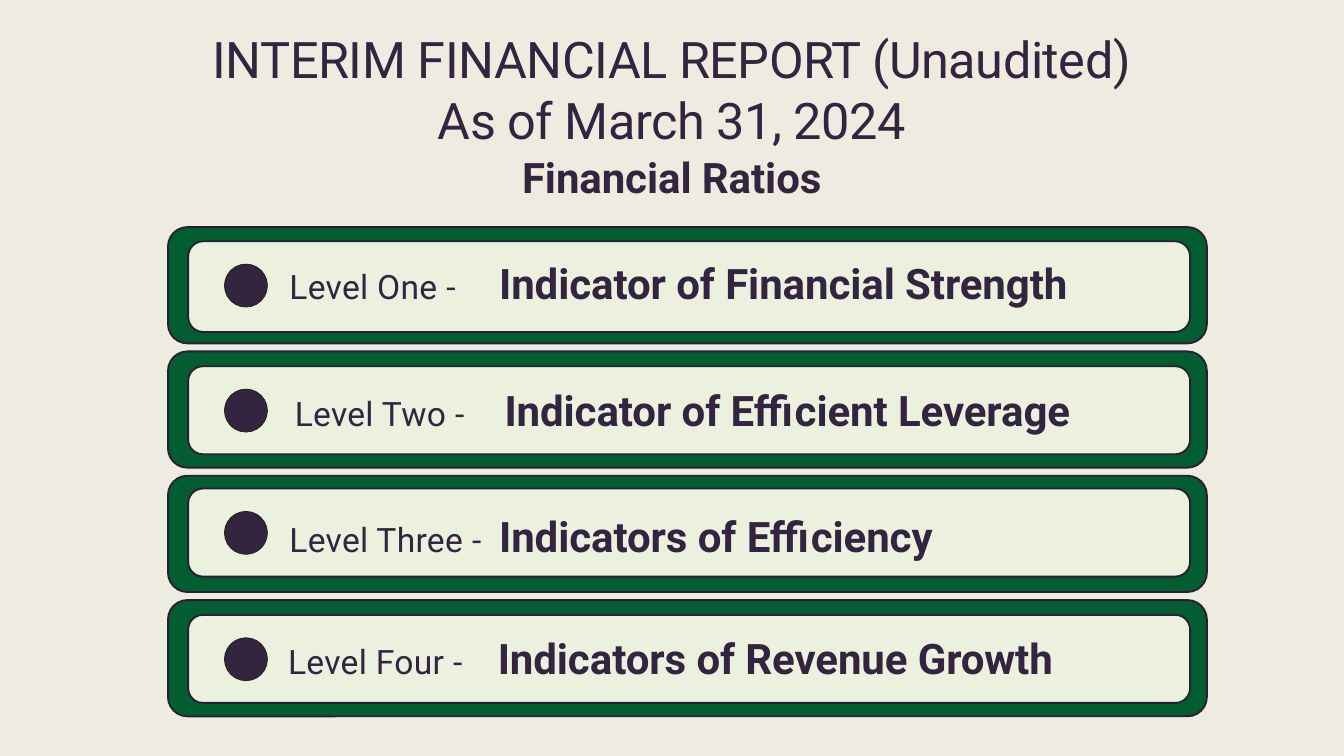
"""Build the financial ratios overview slide."""
from dataclasses import dataclass

import lxml.etree
import pptx
import pptx.dml.color
import pptx.enum.shapes
import pptx.enum.text
import pptx.oxml.ns
import pptx.util

Inches = pptx.util.Inches
Pt = pptx.util.Pt
Shape = pptx.enum.shapes.MSO_SHAPE


@dataclass(frozen=True)
class Theme:
    font: str = "Roboto"
    background: str = "EEECE1"
    frame: str = "025E32"
    panel: str = "EBF1DE"
    outline: str = "291F35"
    ink: str = "332440"
    dot_outline: str = "1E1C11"
    title_size: float = 54
    heading_size: float = 45
    label_size: float = 36
    outline_width: float = 2
    dot_outline_width: float = 0.75


def rgb(value):
    return pptx.dml.color.RGBColor.from_string(value)


class RatioSlide:
    def __init__(self, slide, theme):
        self.slide = slide
        self.theme = theme
        slide.background.fill.solid()
        slide.background.fill.fore_color.rgb = rgb(theme.background)

    def shape(self, preset, box, fill, outline, width):
        item = self.slide.shapes.add_shape(preset, *map(Inches, box))
        item.shadow.inherit = False
        item.fill.solid()
        item.fill.fore_color.rgb = rgb(fill)
        item.line.color.rgb = rgb(outline)
        item.line.width = Pt(width)

    def panel(self, box, fill):
        self.shape(Shape.ROUNDED_RECTANGLE, box, fill,
                   self.theme.outline, self.theme.outline_width)

    def dot(self, left, top, size):
        self.shape(Shape.OVAL, (left, top, size, size), self.theme.ink,
                   self.theme.dot_outline, self.theme.dot_outline_width)

    def text_frame(self, box):
        frame = self.slide.shapes.add_textbox(*map(Inches, box)).text_frame
        frame.word_wrap = True
        frame.auto_size = pptx.enum.text.MSO_AUTO_SIZE.SHAPE_TO_FIT_TEXT
        return frame

    def style(self, paragraph, size=None, bold=None):
        paragraph.font.name = self.theme.font
        paragraph.font.color.rgb = rgb(self.theme.ink)
        paragraph.font.bold = bold
        if size:
            paragraph.font.size = Pt(size)

    def run(self, paragraph, text, spacing, size=None, bold=None):
        run = paragraph.add_run()
        run.text = text
        run.font.bold = bold
        if size:
            run.font.size = Pt(size)
        run.font._element.set("spc", str(round(spacing * 100)))

    def title(self, box, lines, heading):
        frame = self.text_frame(box)
        frame.margin_left = frame.margin_right = frame.margin_bottom = 0
        frame.margin_top = Inches(0.01)
        theme = self.theme
        rows = [(line, theme.title_size, -0.5, False) for line in lines]
        rows.append((heading, theme.heading_size, -0.1, True))
        for index, (text, size, spacing, bold) in enumerate(rows):
            paragraph = frame.add_paragraph() if index else frame.paragraphs[0]
            paragraph.alignment = pptx.enum.text.PP_ALIGN.CENTER
            paragraph.space_before = Pt(1)
            self.style(paragraph, size, bold)
            self.run(paragraph, text, spacing)

    def level(self, box, label, indicator, tab):
        paragraph = self.text_frame(box).paragraphs[0]
        paragraph.space_before = Pt(5.8)
        qn = pptx.oxml.ns.qn
        stops = lxml.etree.SubElement(paragraph._p.get_or_add_pPr(), qn("a:tabLst"))
        lxml.etree.SubElement(stops, qn("a:tab"), pos=str(Inches(tab)), algn="l")
        self.style(paragraph)
        self.run(paragraph, f"{label} ", 0.3, self.theme.label_size)
        self.run(paragraph, "-\t", 0, self.theme.label_size)
        self.run(paragraph, indicator, -0.1, self.theme.heading_size, True)


LEVELS = [
    ("Level One", "Indicator of Financial Strength", 3.59, 1.35, 4.21, 3.79),
    ("Level Two", "Indicator of Efficient Leverage", 5.45, 1.31, 4.29, 5.67),
    ("Level Three", "Indicators of Efficiency", 7.27, 1.31, 4.21, 7.55),
    ("Level Four", "Indicators of Revenue Growth", 9.15, 1.31, 4.19, 9.36),
]
FRAME_TOP, FRAME_PITCH = 3.38, 1.85


def main():
    presentation = pptx.Presentation()
    presentation.slide_width = Inches(20)
    presentation.slide_height = Inches(11.25)
    theme = Theme()
    ratios = RatioSlide(
        presentation.slides.add_slide(presentation.slide_layouts[6]), theme)

    ratios.title((2.5, 0.41, 14.99, 2.74),
                 ["INTERIM FINANCIAL REPORT (Unaudited)", "As of March 31, 2024"],
                 "Financial Ratios")
    for index, (label, indicator, top, height, text_left, text_top) in enumerate(LEVELS):
        ratios.panel((2.5, FRAME_TOP + index * FRAME_PITCH, 15.46, 1.73), theme.frame)
        ratios.panel((2.8, top, 14.91, height), theme.panel)
        ratios.dot(3.34, top + 0.34, 0.64)
        ratios.level((text_left, text_top, 13.36, 0.86), label, indicator, 3.12)

    presentation.save("out.pptx")


if __name__ == "__main__":
    main()
